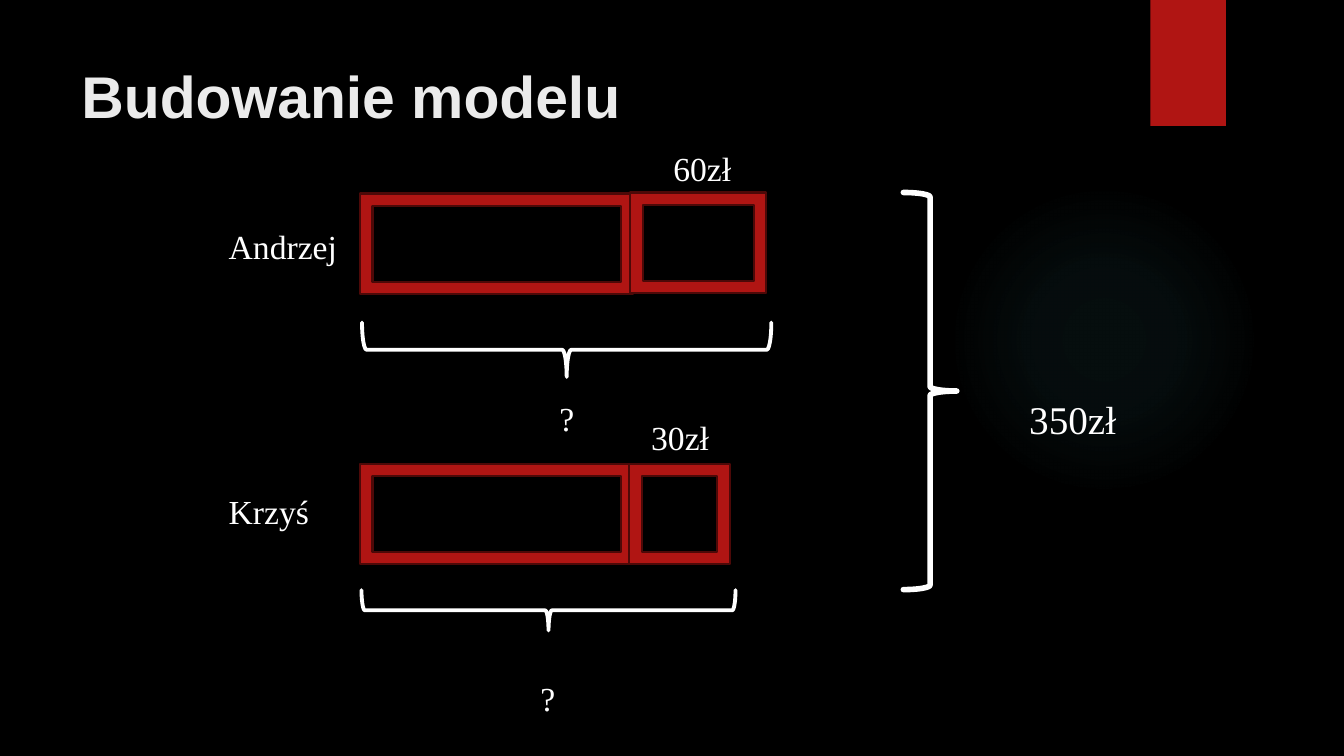
from lxml import etree
from pptx import Presentation
from pptx.dml.color import RGBColor
from pptx.enum.shapes import MSO_SHAPE
from pptx.enum.text import MSO_ANCHOR
from pptx.oxml import parse_xml
from pptx.oxml.ns import qn
from pptx.util import Pt

SCALE = 9144
RED, EDGE, WHITE, BLACK = "B01513", "4D0908", "FFFFFF", "000000"
GLOW, GLOW_BOX = "50B9C1", (941, 183, 308, 308)
STOPS = [(0, 7), (36, 6), (69, 0)]
TAB = (1141, 0, 75, 125)
TITLE = ("Budowanie modelu", (71, 54, 1029, 150))
BARS = [(357, 192, 271, 100), (625, 191, 135, 100),
        (357, 460, 271, 100), (624, 460, 100, 100)]
BRACES = [((535, 144, 54, 406), 90, 2.75),
          ((524, 420, 40, 371), 90, 2.75),
          ((896, 191, 53, 394), 0, 4)]
LABELS = [("Andrzej", (217, 219, 135, 50), 24),
          ("60zł", (658, 142, 78, 50), 24),
          ("Krzyś", (217, 482, 101, 50), 24),
          ("30zł", (636, 409, 78, 50), 24),
          ("?", (545, 390, 28, 50), 24),
          ("?", (526, 668, 28, 50), 24),
          ("350zł", (1011, 387, 107, 57), 28)]


def emu(box):
    return [n * SCALE for n in box]


def color(code):
    return RGBColor.from_string(code)


def shape(kind, box, fill=None, line=None, width=1.5, turn=0):
    item = slide.shapes.add_shape(kind, *emu(box))
    item.shadow.inherit = False
    item.rotation = turn
    if fill:
        item.fill.solid()
        item.fill.fore_color.rgb = color(fill)
    else:
        item.fill.background()
    if line:
        item.line.color.rgb = color(line)
        item.line.width = Pt(width)
    else:
        item.line.fill.background()
    return item


def text(words, box, size=24, font="Times New Roman", tint=WHITE, bold=False, wrap=False):
    frame = slide.shapes.add_textbox(*emu(box)).text_frame
    frame.word_wrap = wrap
    frame.vertical_anchor = MSO_ANCHOR.TOP
    run = frame.paragraphs[0].add_run()
    run.text = words
    run.font.size = Pt(size)
    run.font.name = font
    run.font.bold = bold
    run.font.color.rgb = color(tint)


def glow(item):
    stops = "".join(
        f'<a:gs pos="{pos * 1000}"><a:srgbClr val="{GLOW}">'
        f'<a:alpha val="{alpha * 1000}"/></a:srgbClr></a:gs>'
        for pos, alpha in STOPS)
    grad = parse_xml(
        '<a:gradFill xmlns:a="http://schemas.openxmlformats.org/drawingml/2006/main">'
        f'<a:gsLst>{stops}</a:gsLst><a:path path="circle">'
        '<a:fillToRect l="50000" t="50000" r="50000" b="50000"/></a:path></a:gradFill>')
    props = item.element.spPr
    props.replace(props.find(qn("a:noFill")), grad)


def rounded(item):
    line = item.element.spPr.find(qn("a:ln"))
    line.set("cap", "rnd")
    etree.SubElement(line, qn("a:round"))


deck = Presentation()
deck.slide_width, deck.slide_height = emu((1333, 750))
slide = deck.slides.add_slide(deck.slide_layouts[6])
slide.background.fill.solid()
slide.background.fill.fore_color.rgb = color(BLACK)

glow(shape(MSO_SHAPE.OVAL, GLOW_BOX))
shape(MSO_SHAPE.RECTANGLE, TAB, fill=RED)
text(*TITLE, size=42, font="Arial", tint="EBEBEB", bold=True, wrap=True)
for box in BARS:
    shape(MSO_SHAPE.FRAME, box, fill=RED, line=EDGE)
for box, turn, width in BRACES:
    rounded(shape(MSO_SHAPE.RIGHT_BRACE, box, line=WHITE, width=width, turn=turn))
for words, box, size in LABELS:
    text(words, box, size=size, wrap=words == "?")

deck.save("out.pptx")
